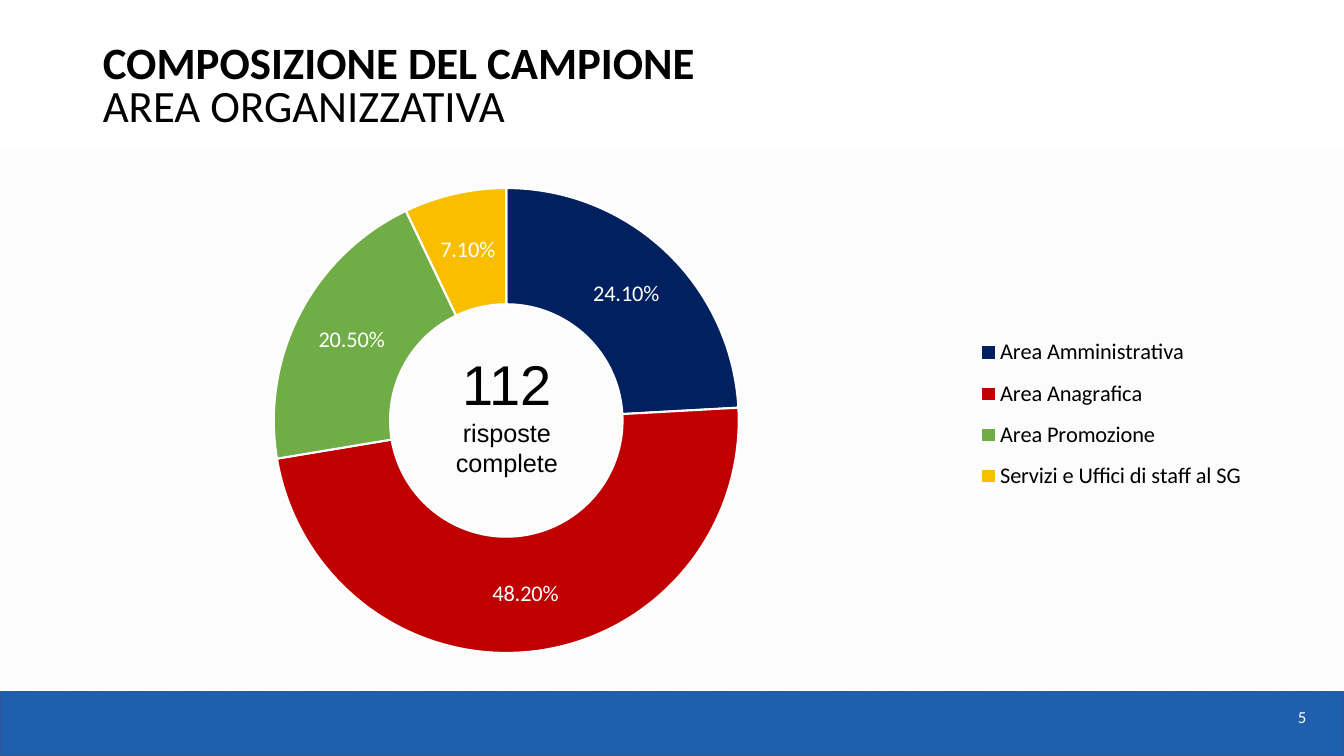
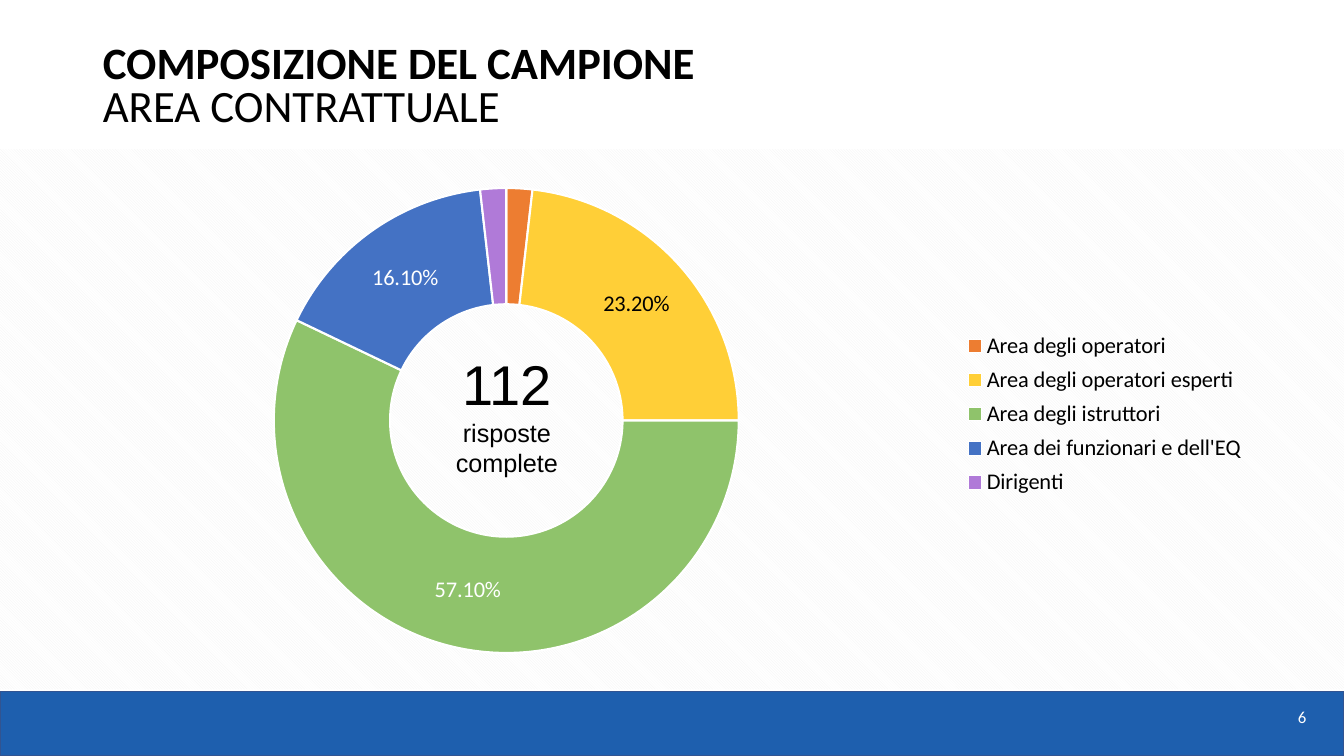
from dataclasses import dataclass

from lxml import etree
from pptx import Presentation
from pptx import util as u
from pptx.chart.chart import Chart
from pptx.chart.data import CategoryChartData
from pptx.dml.color import RGBColor
from pptx.enum import chart as chart_enum
from pptx.enum import dml, shapes, text
from pptx.oxml import parse_xml
from pptx.oxml.ns import nsdecls, qn
from pptx.slide import Slide
from pptx.text.text import Font

# Shared style
WHITE = RGBColor(0xFF, 0xFF, 0xFF)
BLACK = RGBColor(0x00, 0x00, 0x00)
BAND_BLUE = RGBColor(0x1E, 0x5F, 0xAE)
BAND_EDGE = RGBColor(0x32, 0x54, 0x91)
PATTERN_GREY = RGBColor(0xF2, 0xF2, 0xF2)
NAVY = RGBColor(0x00, 0x20, 0x60)
RED = RGBColor(0xC0, 0x00, 0x00)
GREEN = RGBColor(0x70, 0xAD, 0x47)
GOLD = RGBColor(0xFA, 0xBE, 0x00)
ORANGE = RGBColor(0xED, 0x7D, 0x31)
YELLOW = RGBColor(0xFF, 0xCF, 0x37)
LIGHT_GREEN = RGBColor(0x8F, 0xC3, 0x6B)
BLUE = RGBColor(0x44, 0x72, 0xC4)
PURPLE = RGBColor(0xB0, 0x7A, 0xD8)

HEADING_FONT = "Calibri"
CENTRE_FONT = "Arial"
SLIDE_WIDTH, SLIDE_HEIGHT = u.Pt(960), u.Pt(540)
CONTENT_LEFT, CONTENT_WIDTH = u.Pt(66.24), u.Pt(874)
PERCENT = "0.00%"
PLOT_LAYOUT = (0.148, 0.087, 0.38, 0.847)


@dataclass(frozen=True)
class Slice:
    label: str
    share: float
    color: RGBColor
    label_color: RGBColor | None = WHITE  # None hides the value


@dataclass(frozen=True)
class SampleSlide:
    number: int
    subtitle: str
    slices: tuple[Slice, ...]
    legend_layout: tuple[float, float, float, float]


SAMPLE_SLIDES = (
    SampleSlide(5, "AREA ORGANIZZATIVA", (
        Slice("Area Amministrativa", 0.241, NAVY),
        Slice("Area Anagrafica", 0.482, RED),
        Slice("Area Promozione", 0.205, GREEN),
        Slice("Servizi e Uffici di staff al SG", 0.071, GOLD),
    ), (0.72, 0.337, 0.225, 0.324)),
    SampleSlide(6, "AREA CONTRATTUALE", (
        Slice("Area degli operatori", 0.018, ORANGE, None),
        Slice("Area degli operatori esperti", 0.232, YELLOW, BLACK),
        Slice("Area degli istruttori", 0.571, LIGHT_GREEN),
        Slice("Area dei funzionari e dell'EQ", 0.161, BLUE),
        Slice("Dirigenti", 0.018, PURPLE, None),
    ), (0.709, 0.337, 0.236, 0.324)),
)


def style_font(font: Font, size: float, color: RGBColor = BLACK,
               name: str = HEADING_FONT) -> None:
    font.size, font.name = u.Pt(size), name
    font.color.rgb = color


def add_background(slide: Slide) -> None:
    """Draw the footer band and the patterned panel."""
    band = slide.shapes.add_shape(
        shapes.MSO_SHAPE.RECTANGLE, 0, u.Pt(493.9), SLIDE_WIDTH, u.Pt(46.1))
    band.fill.solid()
    band.fill.fore_color.rgb = BAND_BLUE
    band.line.color.rgb = BAND_EDGE
    band.line.width = u.Pt(1)

    panel = slide.shapes.add_shape(
        shapes.MSO_SHAPE.RECTANGLE, 0, u.Pt(106.5), SLIDE_WIDTH, u.Pt(386))
    panel.fill.patterned()
    panel.fill.pattern = dml.MSO_PATTERN.LIGHT_DOWNWARD_DIAGONAL
    panel.fill.fore_color.rgb = PATTERN_GREY
    panel.fill.back_color.rgb = WHITE
    panel.line.fill.background()

    for shape in (band, panel):
        shape.shadow.inherit = False


def add_slide_number(slide: Slide, number: int) -> None:
    box = slide.shapes.add_textbox(u.Pt(767.5), u.Pt(492.5), u.Pt(172.8), u.Pt(41.8))
    frame = box.text_frame
    frame.word_wrap = True
    frame.vertical_anchor = text.MSO_ANCHOR.MIDDLE
    paragraph = frame.paragraphs[0]
    paragraph.text = str(number)
    paragraph.alignment = text.PP_ALIGN.RIGHT
    paragraph.line_spacing = 0.8
    style_font(paragraph.font, 12, WHITE)


def set_title(slide: Slide, subtitle: str) -> None:
    title = slide.shapes.title
    title.left, title.top = CONTENT_LEFT, u.Pt(28.8)
    title.width, title.height = CONTENT_WIDTH, u.Pt(49.7)
    frame = title.text_frame
    frame.auto_size = text.MSO_AUTO_SIZE.NONE
    frame.vertical_anchor = text.MSO_ANCHOR.TOP
    paragraph = frame.paragraphs[0]
    paragraph.alignment = text.PP_ALIGN.LEFT
    paragraph.line_spacing = 0.8
    heading = paragraph.add_run()
    heading.text = "COMPOSIZIONE DEL CAMPIONE"
    paragraph.add_line_break()
    area = paragraph.add_run()
    area.text = subtitle
    for run, bold in ((heading, True), (area, False)):
        style_font(run.font, 32)
        run.font.bold = bold


def add_centre_text(slide: Slide) -> None:
    """Write the response count inside the ring."""
    box = slide.shapes.add_textbox(u.Pt(293), u.Pt(246.2), u.Pt(138.2), u.Pt(99.4))
    frame = box.text_frame
    frame.word_wrap = True
    frame.text = "112\nrisposte complete"
    for paragraph, size in zip(frame.paragraphs, (40, 18)):
        paragraph.alignment = text.PP_ALIGN.CENTER
        style_font(paragraph.font, size, name=CENTRE_FONT)


def make_layout(bounds: tuple[float, float, float, float],
                inner: bool = False) -> etree._Element:
    """Build a manual chart layout from left, top, width and height."""
    target = '<c:layoutTarget val="inner"/>' if inner else ""
    sizes = "".join(f'<c:{name} val="{value}"/>' for name, value in zip("xywh", bounds))
    return parse_xml(
        f'<c:layout {nsdecls("c")}><c:manualLayout>{target}'
        f'<c:xMode val="edge"/><c:yMode val="edge"/>{sizes}'
        "</c:manualLayout></c:layout>")


def place_chart_parts(chart: Chart, sample: SampleSlide) -> None:
    """Fix the ring and legend positions and clear the chart background."""
    chart_node = chart.element.find(qn("c:chart"))
    plot_area = chart_node.find(qn("c:plotArea"))
    legend = chart_node.find(qn("c:legend"))
    for parent in (plot_area, legend):
        for layout in parent.findall(qn("c:layout")):
            parent.remove(layout)
    plot_area.insert(0, make_layout(PLOT_LAYOUT, inner=True))
    legend.find(qn("c:legendPos")).addnext(make_layout(sample.legend_layout))
    chart_node.addnext(parse_xml(
        f'<c:spPr {nsdecls("c", "a")}><a:noFill/><a:ln><a:noFill/></a:ln></c:spPr>'))


def hide_label(chart: Chart, index: int) -> None:
    for label in chart.element.iter(qn("c:dLbl")):
        mark = label.find(qn("c:idx"))
        if mark.get("val") == str(index):
            for child in list(label):
                if child is not mark:
                    label.remove(child)
            etree.SubElement(label, qn("c:delete")).set("val", "1")


def add_ring_chart(slide: Slide, sample: SampleSlide) -> None:
    data = CategoryChartData(number_format=PERCENT)
    data.categories = [part.label for part in sample.slices]
    data.add_series("Series 1", [part.share for part in sample.slices])
    chart = slide.shapes.add_chart(
        chart_enum.XL_CHART_TYPE.DOUGHNUT, CONTENT_LEFT, u.Pt(100.1),
        CONTENT_WIDTH, u.Pt(392.4), data).chart
    chart.has_title = False
    style_font(chart.font, 10)
    chart.has_legend = True
    chart.legend.position = chart_enum.XL_LEGEND_POSITION.RIGHT
    chart.legend.include_in_layout = False
    style_font(chart.legend.font, 16)
    place_chart_parts(chart, sample)

    # Slices and their values
    chart.plots[0].vary_by_categories = True
    series = chart.plots[0].series[0]
    labels = series.data_labels
    labels.show_value = True
    labels.show_percentage = False
    labels.number_format = PERCENT
    labels.number_format_is_linked = False
    style_font(labels.font, 16)
    for index, part in enumerate(sample.slices):
        point = series.points[index]
        point.format.fill.solid()
        point.format.fill.fore_color.rgb = part.color
        point.format.line.color.rgb = WHITE
        point.format.line.width = u.Pt(1.5)
        style_font(point.data_label.font, 16, part.label_color or BLACK)
        if part.label_color is None:
            hide_label(chart, index)


def main() -> None:
    presentation = Presentation()
    presentation.slide_width, presentation.slide_height = SLIDE_WIDTH, SLIDE_HEIGHT
    title_only = presentation.slide_layouts[5]
    for sample in SAMPLE_SLIDES:
        slide = presentation.slides.add_slide(title_only)
        add_background(slide)
        add_slide_number(slide, sample.number)
        set_title(slide, sample.subtitle)
        add_centre_text(slide)
        add_ring_chart(slide, sample)
    presentation.save("out.pptx")


if __name__ == "__main__":
    main()
